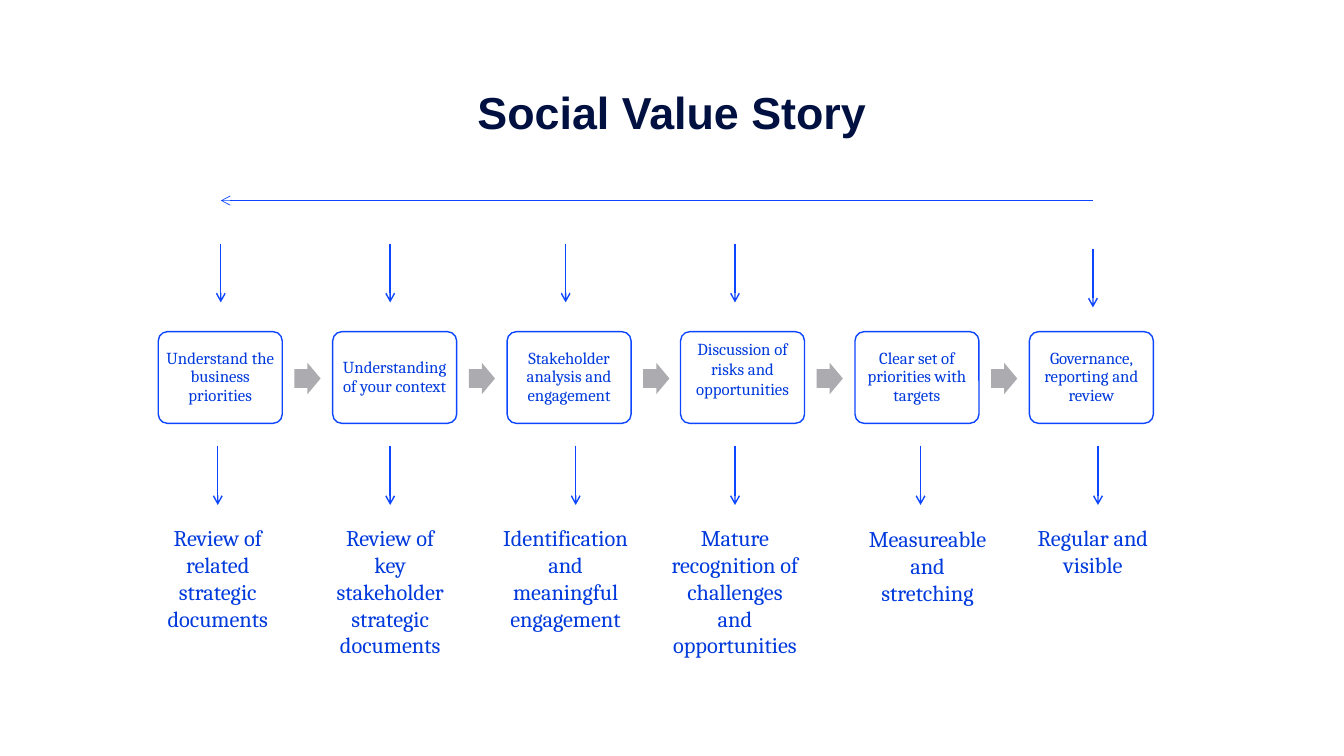
from lxml import etree
from pptx import Presentation
from pptx import util as u
from pptx.dml.color import RGBColor
from pptx.enum import shapes, text
from pptx.oxml import ns

PX = 9144  # 100 px to the inch
LINE, INK, NAVY, GREY, WHITE = "0D46FF", "003ADD", "001141", "ABABB0", "FFFFFF"
BOX_LEFT, BOX_TOP, BOX_WIDTH, BOX_HEIGHT, PITCH = 157, 329, 123, 91, 172.8

# stage, arrow above (x, y), arrow below x, outcome, its left, top, width, height
STAGES = [
    ("Understand the business priorities", (219, 242), 216,
     "Review of related strategic documents", (152, 515, 128, 118)),
    ("Understanding of your context", (387, 242), 387,
     "Review of key stakeholder strategic documents", (320, 515, 134, 145)),
    ("Stakeholder analysis and engagement", (561, 242), 571,
     "Identification and meaningful engagement", (486, 515, 150, 118)),
    ("Discussion of risks and opportunities", (729, 242), 729,
     "Mature recognition of challenges and opportunities", (654, 515, 150, 145)),
    ("Clear set of priorities with targets", None, 913,
     "Measureable and stretching", (845, 516, 150, 91)),
    ("Governance, reporting and review", (1084, 247), 1089,
     "Regular and visible", (1009, 515, 150, 64)),
]
RISKS = 3


def write(frame, words, size, color, font="Cambria"):
    frame.word_wrap = True
    frame.text = words
    para = frame.paragraphs[0]
    para.alignment = text.PP_ALIGN.CENTER
    para.font.size = u.Pt(size)
    para.font.name = font
    para.font.color.rgb = RGBColor.from_string(color)
    return para


def arrow(x1, y1, x2, y2, width=1):
    line = page.shapes.add_connector(
        shapes.MSO_CONNECTOR.STRAIGHT, *[round(v * PX) for v in (x1, y1, x2, y2)])
    line.line.color.rgb = RGBColor.from_string(LINE)
    line.line.width = u.Pt(width)
    etree.SubElement(line.line._get_or_add_ln(), ns.qn("a:tailEnd"), type="arrow")
    etree.SubElement(line._element.spPr, ns.qn("a:effectLst"))


deck = Presentation()
deck.slide_width, deck.slide_height = 1333 * PX, 750 * PX
page = deck.slides.add_slide(deck.slide_layouts[5])

title = page.shapes.title
title.left, title.top, title.width, title.height = [v * PX for v in (189, 79, 955, 64)]
write(title.text_frame, "Social Value Story", 32, NAVY, "Arial").font.bold = True

arrow(1084, 199, 219, 199, 0.5)

for i, (stage, above, below, outcome, place) in enumerate(STAGES):
    left = round(BOX_LEFT + i * PITCH)
    box = page.shapes.add_shape(
        shapes.MSO_SHAPE.ROUNDED_RECTANGLE,
        left * PX, BOX_TOP * PX, BOX_WIDTH * PX, BOX_HEIGHT * PX)
    box.adjustments[0] = 0.1
    box.shadow.inherit = False
    box.fill.solid()
    box.fill.fore_color.rgb = RGBColor.from_string(WHITE)
    box.line.color.rgb = RGBColor.from_string(LINE)
    box.line.width = u.Pt(1)
    frame = box.text_frame
    frame.margin_left = frame.margin_right = 5 * PX
    frame.margin_top = frame.margin_bottom = 5 * PX
    frame.vertical_anchor = text.MSO_ANCHOR.MIDDLE
    para = write(frame, stage, 12, INK)
    if i == RISKS:
        frame.margin_bottom = 22 * PX
    else:
        para.line_spacing = 0.9

    if i < len(STAGES) - 1:
        step = page.shapes.add_shape(
            shapes.MSO_SHAPE.RIGHT_ARROW, (left + 135) * PX, 360 * PX, 26 * PX, 31 * PX)
        step.adjustments[0] = 0.6
        step.shadow.inherit = False
        step.fill.solid()
        step.fill.fore_color.rgb = RGBColor.from_string(GREY)
        step.line.fill.background()

    if above:
        x, y = above
        arrow(x, y, x, y + 58)
    arrow(below, 442, below, 501)

    caption = page.shapes.add_textbox(*[v * PX for v in place])
    write(caption.text_frame, outcome, 16, INK)

deck.save("out.pptx")
